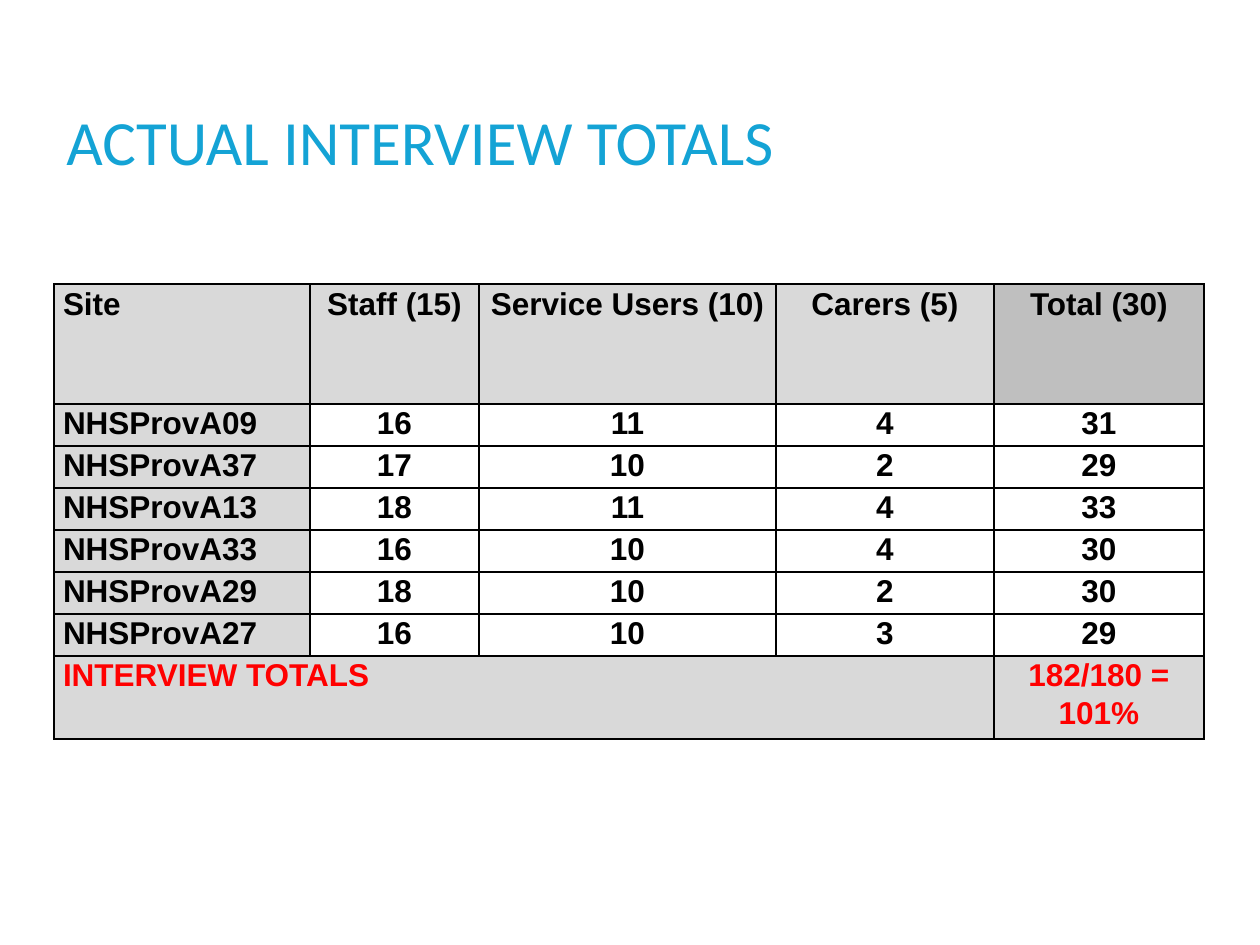
from lxml import etree
from pptx import Presentation
from pptx import util as u
from pptx.dml import color
from pptx.enum import text
from pptx.oxml import ns

PX = u.Inches(1) / 126
HEADINGS = ["Site", "Staff (15)", "Service Users (10)", "Carers (5)", "Total (30)"]
SITES = [
    ["NHSProvA09", 16, 11, 4, 31],
    ["NHSProvA37", 17, 10, 2, 29],
    ["NHSProvA13", 18, 11, 4, 33],
    ["NHSProvA33", 16, 10, 4, 30],
    ["NHSProvA29", 18, 10, 2, 30],
    ["NHSProvA27", 16, 10, 3, 29],
]
TOTALS = ["INTERVIEW TOTALS", "", "", "", "182/180 = 101%"]
COLUMN_WIDTHS = [256, 169, 297, 218, 210]
ROW_HEIGHTS = [120] + [42] * len(SITES) + [83]
CELL_MARGINS = {"margin_left": 9, "margin_right": 9, "margin_top": 0, "margin_bottom": 0}
BLACK, RED, BLUE = "000000", "FF0000", "14A3D5"
LIGHT_GREY, MID_GREY = "D9D9D9", "BFBFBF"


def px(length):
    """Turn px into EMU."""
    return u.Emu(round(length * PX))


def rgb(hex_code):
    """Turn a hex string into a colour."""
    return color.RGBColor.from_string(hex_code)


def apply(target, values):
    """Set each attribute named in a dict of format values."""
    for name, value in values.items():
        setattr(target, name, value)


def write(paragraph, wording, hex_code, **font):
    """Put formatted wording into a paragraph."""
    run = paragraph.add_run()
    run.text = str(wording)
    apply(run.font, font)
    run.font.color.rgb = rgb(hex_code)


def add_borders(cell):
    """Draw a thin black line on every side of a cell."""
    properties = cell._tc.get_or_add_tcPr()
    for side in ("lnL", "lnR", "lnT", "lnB"):
        line = etree.SubElement(properties, ns.qn(f"a:{side}"), w=str(u.Pt(1)))
        fill = etree.SubElement(line, ns.qn("a:solidFill"))
        etree.SubElement(fill, ns.qn("a:srgbClr"), val=BLACK)


def cell_fill(row, column):
    """Choose the fill of a cell by its place in the table."""
    if row == 0 and column == len(HEADINGS) - 1:
        return MID_GREY
    if column == 0 or row in (0, len(SITES) + 1):
        return LIGHT_GREY
    return None


def fill_cell(cell, wording, row, column):
    """Format one cell and write its wording."""
    apply(cell, {name: px(size) for name, size in CELL_MARGINS.items()})
    add_borders(cell)
    shade = cell_fill(row, column)
    if shade:
        cell.fill.solid()
        cell.fill.fore_color.rgb = rgb(shade)
    else:
        cell.fill.background()
    paragraph = cell.text_frame.paragraphs[0]
    align = text.PP_ALIGN.CENTER if column else text.PP_ALIGN.LEFT
    apply(paragraph, {"alignment": align, "line_spacing": 1.07})
    if wording != "":
        ink = RED if row == len(SITES) + 1 else BLACK
        write(paragraph, wording, ink, name="Arial", size=u.Pt(18), bold=True)


def add_title(slide, left, top, width, height):
    """Place the slide title."""
    title = slide.shapes.add_textbox(*map(px, (left, top, width, height)))
    title.text_frame.word_wrap = True
    write(title.text_frame.paragraphs[0], "ACTUAL INTERVIEW TOTALS", BLUE,
          name="Calibri", size=u.Pt(36))


def add_interview_table(slide, left, top):
    """Place the table of interviews per site."""
    rows = [HEADINGS, *SITES, TOTALS]
    box = (left, top, sum(COLUMN_WIDTHS), sum(ROW_HEIGHTS))
    table = slide.shapes.add_table(len(rows), len(HEADINGS), *map(px, box)).table
    apply(table, {"first_row": False, "horz_banding": False})
    for column, width in zip(table.columns, COLUMN_WIDTHS):
        column.width = px(width)
    for row, height in zip(table.rows, ROW_HEIGHTS):
        row.height = px(height)
    for row, entries in enumerate(rows):
        for column, wording in enumerate(entries):
            fill_cell(table.cell(row, column), wording, row, column)
    last = len(rows) - 1
    table.cell(last, 0).merge(table.cell(last, len(HEADINGS) - 2))


def main():
    """Build and save the slide."""
    deck = Presentation()
    apply(deck, {"slide_width": u.Inches(10), "slide_height": u.Inches(7.5)})
    slide = deck.slides.add_slide(deck.slide_layouts[6])
    add_title(slide, 54, 96, 833, 89)
    add_interview_table(slide, 54, 284)
    deck.save("out.pptx")


if __name__ == "__main__":
    main()
